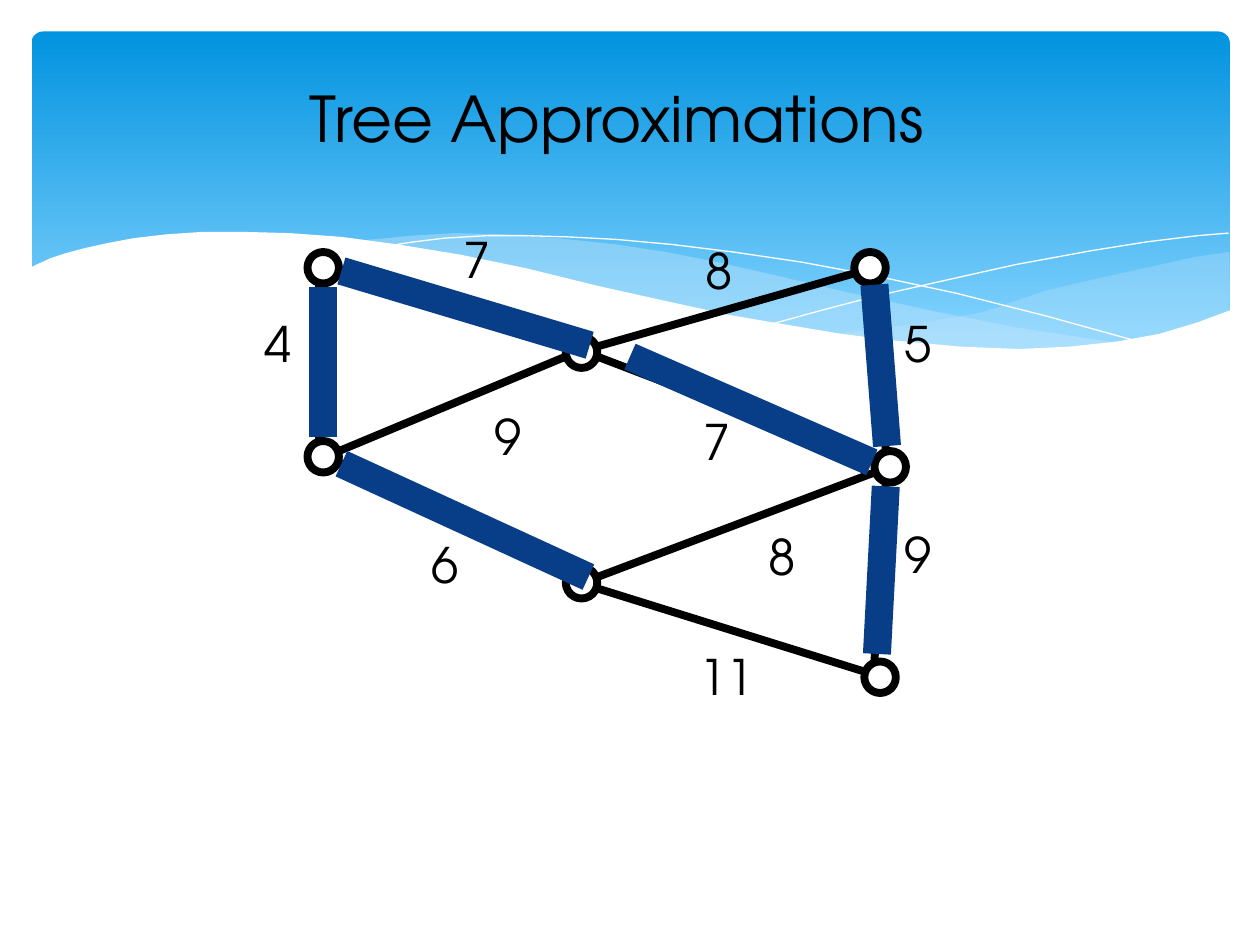
from lxml import etree
from pptx import Presentation
from pptx import util as u
from pptx.dml import color
from pptx.enum import shapes, text
from pptx.oxml import ns

PX = u.Inches(1) // 100
FONT = "TeX Gyre Adventor"
BLACK, WHITE, NAVY, PALE = "000000", "FFFFFF", "073E87", "C6E7FC"

RIGHT_WAVE = [(950, 175), (923, 179), (896, 185), (851, 195), (807, 205), (754, 223), (704, 232),
              (636, 240), (666, 246), (694, 249), (732, 252), (778, 253), (819, 252), (856, 248),
              (888, 244), (917, 237), (938, 227), (951, 222), (951, 175)]
MIDDLE_WAVE = [(868, 248), (841, 244), (782, 235), (716, 222), (643, 206), (588, 193), (544, 183),
               (503, 175), (464, 169), (417, 164), (374, 161), (336, 160), (303, 162), (261, 166),
               (298, 171), (337, 178), (379, 186), (424, 197), (466, 207), (505, 215), (559, 227),
               (609, 236), (655, 243), (697, 249), (748, 252), (793, 253), (842, 252), (868, 248)]
FALLING_CURVE = [(284, 170), (303, 167), (328, 164), (362, 162), (391, 162), (425, 163), (464, 165),
                 (508, 169), (557, 175), (611, 183), (670, 194), (735, 208), (806, 226), (882, 247)]
RISING_CURVE = [(588, 232), (628, 221), (670, 210), (723, 198), (781, 185), (841, 174), (885, 167),
                (926, 162), (950, 160)]
WHITE_WAVE = [(952, 221), (925, 231), (895, 240), (862, 246), (825, 250), (784, 252), (736, 250),
              (683, 245), (643, 240), (601, 233), (554, 225), (504, 214), (450, 202), (393, 188),
              (340, 177), (291, 169), (246, 163), (205, 160), (168, 159), (136, 159), (107, 161),
              (81, 164), (60, 168), (42, 172), (27, 176), (15, 180), (4, 185), (-2, 188),
              (-2, 304), (952, 304)]

NODES = [(44, 180), (44, 30), (249, 97), (478, 30), (494, 188), (486, 355), (249, 280)]
EDGES = [(69, 47, 249, 105), (69, 188, 249, 113), (274, 105, 478, 47), (53, 180, 53, 55),
         (494, 197, 274, 113), (503, 188, 494, 55), (69, 197, 249, 288), (274, 288, 494, 205),
         (274, 297, 486, 363), (494, 355, 503, 213)]
TREE_EDGES = [(267, 288, 71, 198), (56, 177, 56, 58), (268, 104, 71, 45), (492, 197, 300, 113),
              (496, 349, 503, 216), (504, 184, 494, 56)]
WEIGHTS = [("4", -1, 74, 43), ("8", 399, 243, 43), ("7", 348, 152, 43), ("9", 182, 148, 43),
           ("6", 132, 249, 43), ("11", 344, 338, 66), ("9", 507, 241, 43), ("5", 507, 74, 43),
           ("8", 349, 16, 43), ("7", 157, 7, 43)]


def rgb(value):
    """Turn a hex string into a colour."""
    return color.RGBColor.from_string(value)


def place(*lengths):
    """Turn px lengths into EMU."""
    return [n * PX for n in lengths]


def set_text(sp, words, size, align):
    """Write one line of black text at the top of a shape."""
    tf = sp.text_frame
    tf.text = words
    tf.vertical_anchor = text.MSO_ANCHOR.TOP
    tf.word_wrap = False
    p = tf.paragraphs[0]
    p.alignment = align
    font = p.runs[0].font
    font.name, font.size = FONT, u.Pt(size)
    font.color.rgb = rgb(BLACK)


def add_path(s, left, top, points, fill=None, opacity=100):
    """Draw a filled wave, or a white hairline when no fill is given."""
    builder = s.shapes.build_freeform(*points[0], scale=PX)
    builder.add_line_segments(points[1:], close=fill is not None)
    sp = builder.convert_to_shape(*place(left, top))
    sp.shadow.inherit = False
    if fill is None:
        sp.fill.background()
        sp.line.color.rgb = rgb(WHITE)
        sp.line.width = u.Pt(0)
        return
    sp.line.fill.background()
    sp.fill.solid()
    sp.fill.fore_color.rgb = rgb(fill)
    if opacity < 100:
        clr = sp.fill._xPr.find(".//" + ns.qn("a:srgbClr"))
        etree.SubElement(clr, ns.qn("a:alpha"), val=str(opacity * 1000))


def add_banner(s, left, top, width, height):
    """Draw the gradient panel and its waves."""
    sp = s.shapes.add_shape(shapes.MSO_SHAPE.ROUNDED_RECTANGLE, *place(left, top, width, height))
    sp.adjustments[0] = 0.034 if height else 0
    sp.shadow.inherit = False
    sp.line.fill.background()
    sp.fill.gradient()
    sp.fill.gradient_angle = 270
    for stop, (position, value) in zip(sp.fill.gradient_stops, [(0, "0293E0"), (0.9, "83D3FE")]):
        stop.position = position
        stop.color.rgb = rgb(value)
    add_path(s, left, top, RIGHT_WAVE, PALE, 29)
    add_path(s, left, top, MIDDLE_WAVE, PALE, 40)
    add_path(s, left, top, FALLING_CURVE)
    add_path(s, left, top, RISING_CURVE)
    add_path(s, left, top, WHITE_WAVE, WHITE)


def add_title(s, left, top, width, height):
    """Place the title above the banner."""
    sp = s.shapes.title
    s.shapes._spTree.append(sp._element)
    sp.left, sp.top, sp.width, sp.height = place(left, top, width, height)
    set_text(sp, "Tree Approximations", 36, text.PP_ALIGN.LEFT)
    sp.text_frame.auto_size = text.MSO_AUTO_SIZE.NONE
    sp.text_frame.word_wrap = True


def add_edges(s, left, top, edges, value, weight):
    """Draw straight edges of one colour and weight."""
    for x1, y1, x2, y2 in edges:
        line = s.shapes.add_connector(shapes.MSO_CONNECTOR.STRAIGHT,
                                      *place(left + x1, top + y1, left + x2, top + y2))
        line.line.color.rgb = rgb(value)
        line.line.width = u.Pt(weight)
        etree.SubElement(line._element.spPr, ns.qn("a:effectLst"))


def add_graph(s, left, top):
    """Draw the weighted graph with its spanning tree on top."""
    for x, y in NODES:
        sp = s.shapes.add_shape(shapes.MSO_SHAPE.OVAL, *place(left + x, top + y, 25, 25))
        sp.shadow.inherit = False
        sp.fill.solid()
        sp.fill.fore_color.rgb = rgb(WHITE)
        sp.line.color.rgb = rgb(BLACK)
        sp.line.width = u.Pt(4.5)
    add_edges(s, left, top, EDGES, BLACK, 4.5)
    for words, x, y, width in WEIGHTS:
        sp = s.shapes.add_textbox(*place(left + x, top + y, width, 57))
        set_text(sp, words, 28, text.PP_ALIGN.CENTER)
    add_edges(s, left, top, TREE_EDGES, NAVY, 16)


def main():
    """Build and save the slide."""
    prs = Presentation()
    prs.slide_width, prs.slide_height = place(1000, 750)
    s = prs.slides.add_slide(prs.slide_layouts[5])
    add_banner(s, 25, 25, 951, 270)
    add_title(s, 236, 58, 528, 70)
    add_graph(s, 200, 170)
    prs.save("out.pptx")


if __name__ == "__main__":
    main()
